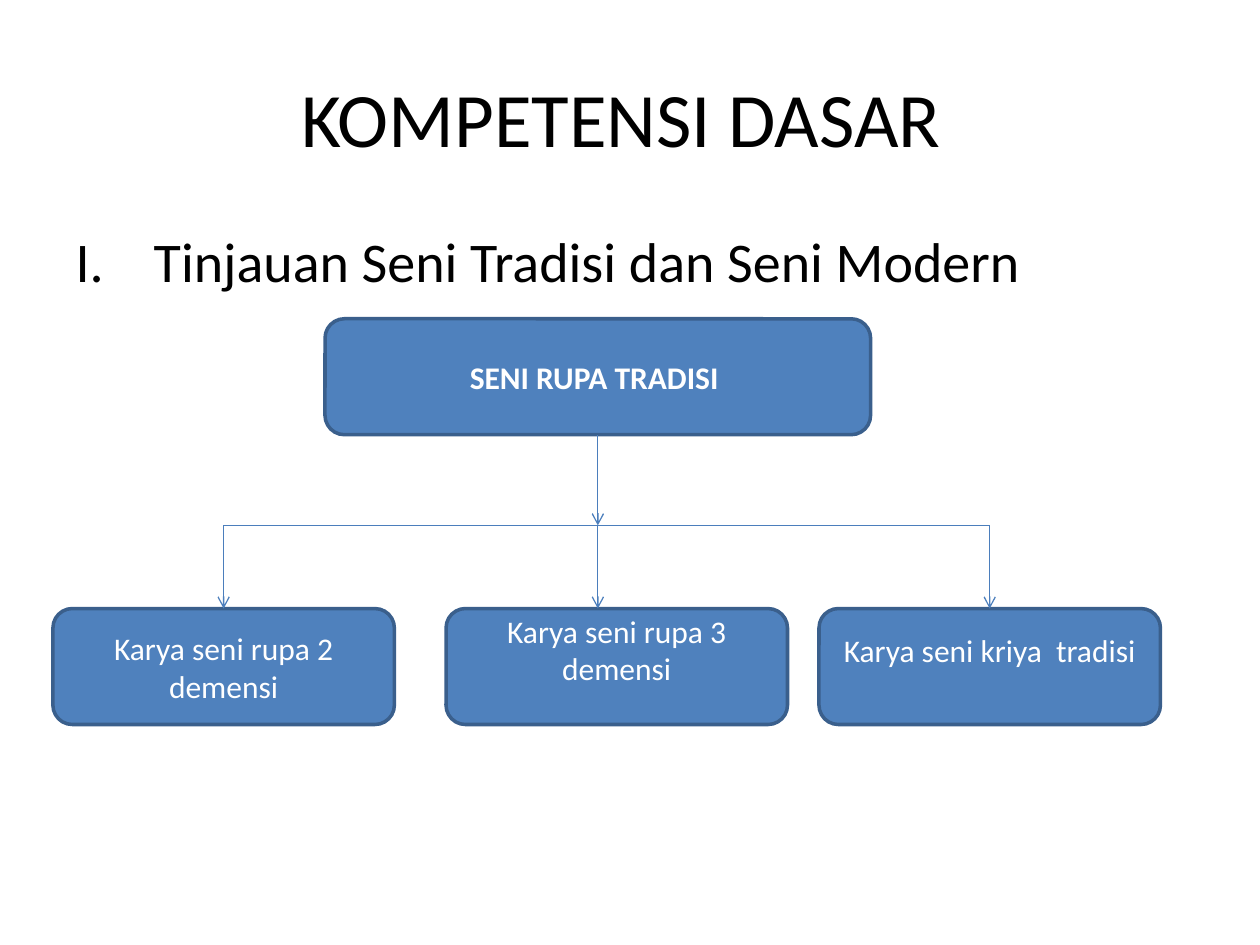
from lxml import etree
from pptx import Presentation
from pptx.dml.color import RGBColor
from pptx.enum import shapes, text
from pptx.oxml.ns import qn
from pptx.util import Inches, Pt

COLORS = {"text": "000000", "box": "4F81BD", "edge": "3A5F8C",
          "line": "4B7EBC", "label": "FFFFFF"}
BOTTOM, TOP = 2, 0


class Deck:
    font = "Calibri"

    def __init__(self):
        self.prs = Presentation()
        self.prs.slide_width, self.prs.slide_height = Inches(10), Inches(7.5)
        self.slide = self.prs.slides.add_slide(self.prs.slide_layouts[1])

    def color(self, name):
        return RGBColor.from_string(COLORS[name])

    def set_text(self, sp, words, size, color, bold=False):
        p = sp.text_frame.paragraphs[0]
        p.text = words
        p.font.name, p.font.size, p.font.bold = self.font, Pt(size), bold
        p.font.color.rgb = self.color(color)
        return p

    def place(self, sp, left, top, width, height):
        sp.left, sp.top = Inches(left), Inches(top)
        sp.width, sp.height = Inches(width), Inches(height)

    def title(self, words):
        sp = self.slide.shapes.title
        self.place(sp, 0.5, 0.3, 9, 1.25)
        sp.text_frame.vertical_anchor = text.MSO_ANCHOR.MIDDLE
        self.set_text(sp, words, 44, "text").alignment = text.PP_ALIGN.CENTER

    def roman_list(self, words):
        sp = self.slide.placeholders[1]
        self.place(sp, 0.5, 1.75, 9, 4.95)
        props = self.set_text(sp, words, 32, "text")._p.get_or_add_pPr()
        props.set("marL", str(Inches(0.62)))
        props.set("indent", str(-Inches(0.62)))
        number = etree.Element(qn("a:buAutoNum"), type="romanUcPeriod")
        props.insert_element_before(number, "a:tabLst", "a:defRPr", "a:extLst")

    def box(self, words, left, top, width, bold=False, raised=False):
        """Raised text is centred above the middle of the box."""
        sp = self.slide.shapes.add_shape(
            shapes.MSO_SHAPE.ROUNDED_RECTANGLE,
            Inches(left), Inches(top), Inches(width), Inches(0.92))
        sp.shadow.inherit = False
        sp.fill.solid()
        sp.fill.fore_color.rgb = self.color("box")
        sp.line.color.rgb = self.color("edge")
        sp.line.width = Pt(2)
        tf = sp.text_frame
        tf.word_wrap = True
        tf.vertical_anchor = text.MSO_ANCHOR.MIDDLE
        if raised:
            tf.margin_top, tf.margin_bottom = 0, Inches(0.27)
        p = self.set_text(sp, words, 18, "label", bold)
        p.alignment = text.PP_ALIGN.CENTER
        return sp

    def line(self, start, end, arrow=True):
        cx = self.slide.shapes.add_connector(
            shapes.MSO_CONNECTOR.STRAIGHT, *start, *end)
        cx.line.color.rgb = self.color("line")
        cx.line.width = Pt(0.75)
        props = cx._element.spPr
        if arrow:
            etree.SubElement(props.find(qn("a:ln")), qn("a:tailEnd"), type="arrow")
        etree.SubElement(props, qn("a:effectLst"))
        return cx


def center_x(sp):
    return sp.left + sp.width // 2


def main():
    deck = Deck()
    deck.title("KOMPETENSI DASAR ")
    deck.roman_list("Tinjauan Seni Tradisi dan Seni Modern")

    row, width = 4.83, 2.71
    tradition = deck.box("SENI RUPA TRADISI ", 2.58, 2.53, 4.33, bold=True)
    flat = deck.box("Karya seni rupa 2 demensi", 0.42, row, width)
    deck.box("Karya seni rupa 3 demensi", 3.54, row, width, raised=True)
    craft = deck.box("Karya seni kriya  tradisi", 6.5, row, width, raised=True)

    bar = Inches(4.17)
    trunk = center_x(tradition)
    stem = deck.line((trunk, tradition.top + tradition.height), (trunk, bar))
    stem.begin_connect(tradition, BOTTOM)
    deck.line((center_x(flat), bar), (center_x(craft), bar), arrow=False)
    for child in (flat, craft):
        x = center_x(child)
        deck.line((x, bar), (x, child.top)).end_connect(child, TOP)
    deck.line((trunk, bar), (trunk, Inches(row)))

    deck.prs.save("out.pptx")


if __name__ == "__main__":
    main()
